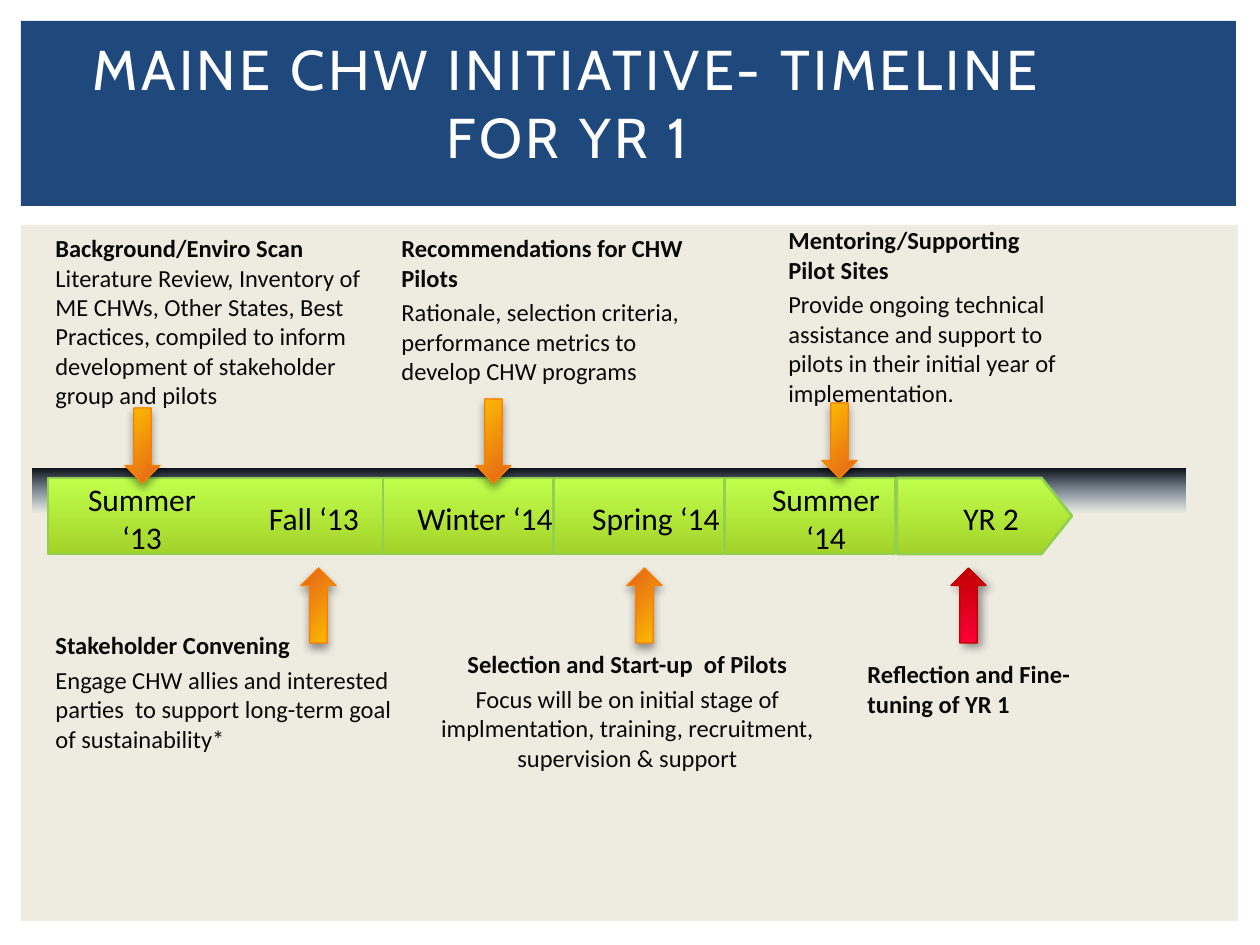
"""Build the one-slide timeline for year one of the Maine CHW Initiative."""
from dataclasses import dataclass

from lxml.etree import SubElement
from pptx import Presentation
from pptx.dml.color import RGBColor
from pptx.enum.shapes import MSO_SHAPE
from pptx.enum.text import MSO_ANCHOR, PP_ALIGN
from pptx.oxml.ns import qn
from pptx.util import Emu, Pt


@dataclass(frozen=True)
class Theme:
    navy: str = "1F497D"
    sand: str = "EEECE1"
    white: str = "FFFFFF"
    black: str = "000000"
    ink: str = "080808"
    dusk: tuple = ("070D13", "1F497D")
    lime: tuple = ("C0FF4D", "A4D329")
    leaf: str = "92D050"
    gold: tuple = ("FFC000", "E36119")
    amber: str = "FC7E00"
    red: tuple = ("FB0036", "C00000")
    brick: str = "C00000"
    title: int = 32
    label: int = 18
    body: int = 14
    head_font: str = "Cabin"
    text_font: str = "Calibri"


class Deck:
    def __init__(self, theme, wide, high):
        self.theme = theme
        self.show = Presentation()
        self.show.slide_width, self.show.slide_height = self.px(wide), self.px(high)
        self.slide = self.show.slides.add_slide(self.show.slide_layouts[6])

    @staticmethod
    def px(size):
        return Emu(round(size * 914400 / 126))

    def place(self, box):
        return [self.px(size) for size in box]

    def shape(self, box, fill, kind=MSO_SHAPE.RECTANGLE, angle=270, line=None, width=1.5, adjust=()):
        item = self.slide.shapes.add_shape(kind, *self.place(box))
        item.shadow.inherit = False
        for index, value in enumerate(adjust):
            item.adjustments[index] = value
        if isinstance(fill, str):
            item.fill.solid()
            item.fill.fore_color.rgb = RGBColor.from_string(fill)
        else:
            item.fill.gradient()
            item.fill.gradient_angle = angle
            for stop, color in zip(item.fill.gradient_stops, fill):
                stop.color.rgb = RGBColor.from_string(color)
        if line:
            item.line.color.rgb = RGBColor.from_string(line)
            item.line.width = Pt(width)
        else:
            item.line.fill.background()
        return item

    def fade(self, box, fill):
        item = self.shape(box, fill)
        color = item._element.spPr.findall(".//" + qn("a:srgbClr"))[-1]
        SubElement(color, qn("a:alpha"), val="0")

    def arrow(self, box, fill, line, angle, turn=0, cast=90):
        item = self.shape(box, fill, MSO_SHAPE.DOWN_ARROW, angle, line, 0.75, (0.5, 0.5))
        item.rotation = turn
        effects = item._element.spPr.find(qn("a:effectLst"))
        shadow = SubElement(effects, qn("a:outerShdw"), blurRad=str(Pt(5)), dist=str(Pt(3)),
                            dir=str(cast * 60000), algn="ctr", rotWithShape="0")
        color = SubElement(shadow, qn("a:srgbClr"), val=self.theme.black)
        SubElement(color, qn("a:alpha"), val="40000")

    def text(self, box, lines, color, style, align=PP_ALIGN.LEFT, anchor=MSO_ANCHOR.TOP, track=0):
        frame = self.slide.shapes.add_textbox(*self.place(box)).text_frame
        for name, value in {"word_wrap": True, "vertical_anchor": anchor}.items():
            setattr(frame, name, value)
        for index, line in enumerate(lines):
            para = frame.add_paragraph() if index else frame.paragraphs[0]
            para.alignment = align
            if index:
                para.space_before = Pt(3)
            for words, bold in line:
                run = para.add_run()
                run.text = words
                for name, value in {**style, "bold": bold}.items():
                    setattr(run.font, name, value)
                run.font.color.rgb = RGBColor.from_string(color)
                if track:
                    run._r.get_or_add_rPr().set("spc", str(track * 100))

    def title(self, box, words):
        style = {"name": self.theme.head_font, "size": Pt(self.theme.title)}
        self.text(box, [[(words, False)]], self.theme.white, style,
                  PP_ALIGN.CENTER, MSO_ANCHOR.MIDDLE, 2)

    def label(self, box, words):
        style = {"name": self.theme.text_font, "size": Pt(self.theme.label)}
        self.text(box, [[(words, False)]], self.theme.black, style,
                  PP_ALIGN.CENTER, MSO_ANCHOR.MIDDLE)

    def note(self, box, lines, align=PP_ALIGN.LEFT):
        style = {"name": self.theme.text_font, "size": Pt(self.theme.body)}
        self.text(box, lines, self.theme.ink, style, align)

    def save(self):
        self.show.save("out.pptx")


def main():
    theme = Theme()
    deck = Deck(theme, 1260, 945)
    deck.shape((21, 225, 1217, 696), theme.sand)
    deck.shape((21, 21, 1215, 185), theme.navy)
    deck.fade((33, 469, 1153, 44), theme.dusk)

    top, high, step = 478, 76, 171
    deck.shape((897, top, 175, high), theme.lime, MSO_SHAPE.PENTAGON, line=theme.leaf, adjust=(0.4,))
    deck.shape((48, top, 335, high), theme.lime, line=theme.leaf)
    for index in range(3):
        deck.shape((383 + index * step, top, 170, high), theme.lime, line=theme.leaf)

    terms = ["Summer ‘13", "Fall ‘13", "Winter ‘14", "Spring ‘14", "Summer ‘14", "YR 2"]
    for left, term in zip((57, 229, 400, 571, 741, 906), terms):
        deck.label((left, 493, 170, 50), term)

    for left, peak, tall in ((125, 408, 75), (476, 399, 84), (822, 403, 75)):
        deck.arrow((left, peak, 35, tall), theme.gold, theme.amber, 315)
    for left in (301, 627):
        deck.arrow((left, 568, 35, 75), theme.gold, theme.amber, 315, 180)
    deck.arrow((951, 568, 35, 75), theme.red, theme.brick, 270, 180, 45)

    deck.note((43, 227, 340, 191), [[
        ("Background/Enviro Scan", True),
        (" Literature Review, Inventory of ME CHWs, Other States, Best Practices, "
         "compiled to inform development of stakeholder group and pilots", False)]])
    pairs = [
        ((389, 227, 324, 167), PP_ALIGN.LEFT, "Recommendations for CHW Pilots",
         "Rationale, selection criteria, performance metrics to develop CHW programs"),
        ((776, 219, 300, 196), PP_ALIGN.LEFT, "Mentoring/Supporting Pilot Sites",
         "Provide ongoing technical assistance and support to pilots in their "
         "initial year of implementation."),
        ((43, 624, 383, 137), PP_ALIGN.LEFT, "Stakeholder Convening",
         "Engage CHW allies and interested  parties  to support long-term goal of sustainability*"),
        ((427, 643, 401, 137), PP_ALIGN.CENTER, "Selection and Start-up  of Pilots",
         "Focus will be on initial stage of implmentation, training, recruitment, "
         "supervision & support"),
    ]
    for box, align, head, body in pairs:
        deck.note(box, [[(head, True)], [(body, False)]], align)
    deck.note((855, 653, 239, 72), [[("Reflection and Fine-tuning of YR 1", True)]])

    deck.title((69, 23, 997, 158), "MAINE CHW INITIATIVE- TIMELINE FOR YR 1")
    deck.save()


if __name__ == "__main__":
    main()
